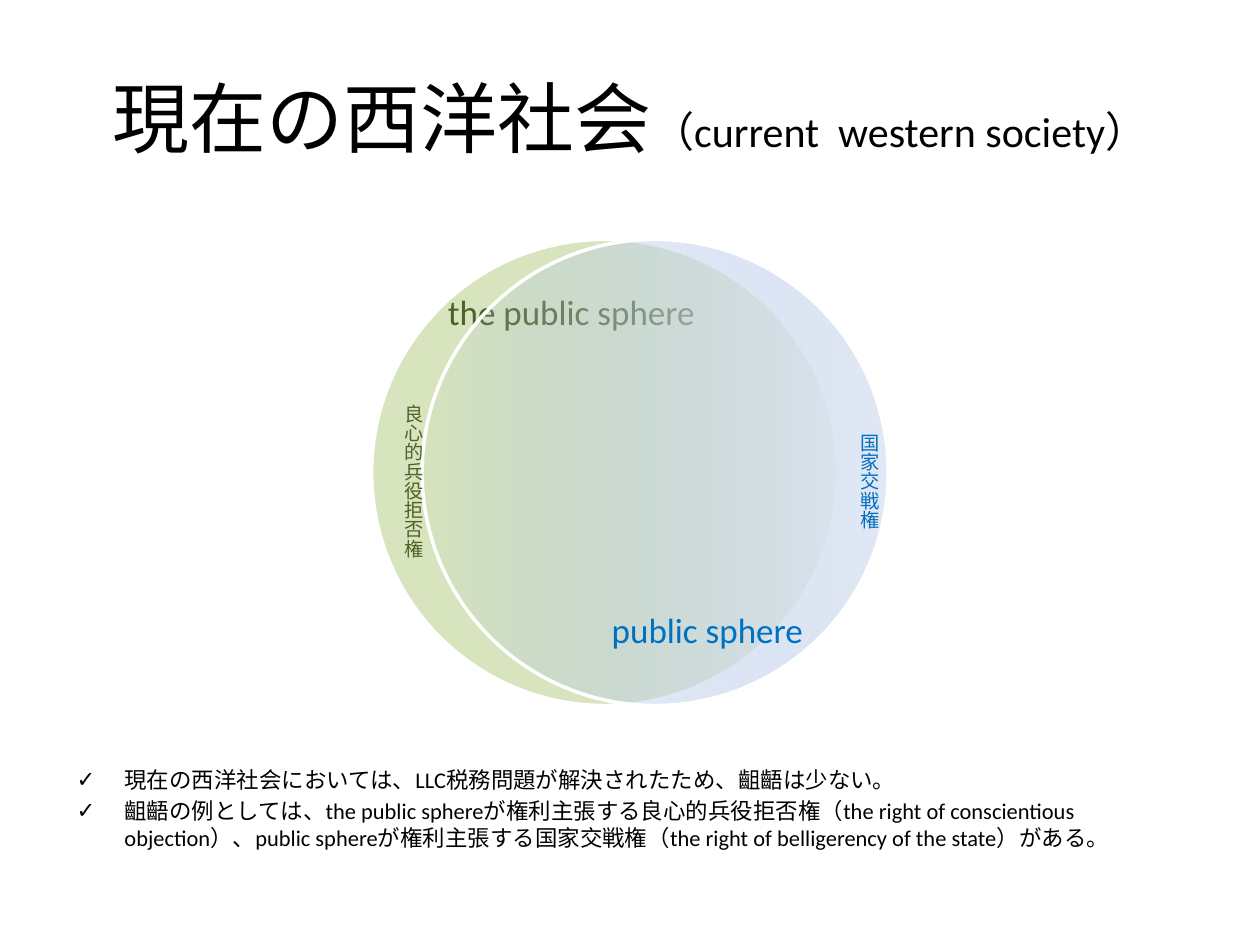
from lxml import etree
from pptx import Presentation
from pptx.dml.color import RGBColor
from pptx.enum.shapes import MSO_SHAPE
from pptx.enum.text import MSO_ANCHOR, PP_ALIGN
from pptx.oxml import parse_xml
from pptx.oxml.ns import nsdecls, qn
from pptx.util import Inches, Pt

ELLIPSE = MSO_SHAPE.OVAL
TOP, MIDDLE, BOTTOM = MSO_ANCHOR.TOP, MSO_ANCHOR.MIDDLE, MSO_ANCHOR.BOTTOM
CENTER = PP_ALIGN.CENTER

BLACK = RGBColor(0x00, 0x00, 0x00)
WHITE = RGBColor(0xFF, 0xFF, 0xFF)
PALE_GREEN = RGBColor(0xD7, 0xE4, 0xBD)
DARK_GREEN = RGBColor(0x4F, 0x62, 0x28)
BLUE = RGBColor(0x00, 0x70, 0xC0)
FADE_STOPS = [
    (0, RGBColor(0x9A, 0xB5, 0xE4), 0),
    (50, RGBColor(0xC2, 0xD1, 0xED), 50),
    (100, RGBColor(0xE1, 0xE8, 0xF5), 100),
]

TITLE_PARTS = [("現在の西洋社会", 44), ("（current  western society）", 24)]
NOTES = [
    "現在の西洋社会においては、LLC税務問題が解決されたため、齟齬は少ない。",
    "齟齬の例としては、the public sphereが権利主張する良心的兵役拒否権"
    "（the right of conscientious objection）、public sphereが権利主張する"
    "国家交戦権（the right of belligerency of the state）がある。",
]


def set_format(target, **values):
    for name, value in values.items():
        setattr(target, name, value)


def add_run(p, text, size, color):
    r = p.add_run()
    r.text = text
    set_format(r.font, name="Calibri", size=Pt(size))
    r.font.color.rgb = color


def add_circle(s, left, top, size):
    sp = s.shapes.add_shape(ELLIPSE, *map(Inches, (left, top, size, size)))
    sp.shadow.inherit = False
    sp.fill.solid()
    sp.fill.fore_color.rgb = PALE_GREEN
    sp.line.color.rgb = WHITE
    sp.line.width = Pt(2)
    return sp


def fade_fill(sp):
    stops = "".join(
        f'<a:gs pos="{pos * 1000}"><a:srgbClr val="{color}">'
        f'<a:alpha val="{alpha * 1000}"/></a:srgbClr></a:gs>'
        for pos, color, alpha in FADE_STOPS
    )
    solid = sp._element.spPr.find(qn("a:solidFill"))
    solid.getparent().replace(solid, parse_xml(
        f'<a:gradFill {nsdecls("a")} rotWithShape="1"><a:gsLst>{stops}</a:gsLst>'
        '<a:lin ang="0" scaled="0"/></a:gradFill>'))


def add_sphere_label(s, box, text, color, anchor):
    tf = s.shapes.add_textbox(*map(Inches, box)).text_frame
    set_format(tf, word_wrap=True, vertical_anchor=anchor, margin_left=0,
               margin_right=0, margin_top=0, margin_bottom=0)
    p = tf.paragraphs[0]
    set_format(p, alignment=CENTER, line_spacing=0.9)
    add_run(p, text, 20, color)


def add_vertical_label(s, box, text, color):
    tf = s.shapes.add_textbox(*map(Inches, box)).text_frame
    tf.word_wrap = False
    tf._txBody.bodyPr.set("vert", "eaVert")
    add_run(tf.paragraphs[0], text, 11, color)


def add_title(s, box):
    sp = s.shapes.title
    left, top, width, height = map(Inches, box)
    set_format(sp, left=left, top=top, width=width, height=height)
    sp.text_frame.vertical_anchor = MIDDLE
    p = sp.text_frame.paragraphs[0]
    p.alignment = CENTER
    for text, size in TITLE_PARTS:
        add_run(p, text, size, BLACK)


def add_spheres(s, left, top, size, shift):
    label_top, label_w, label_h = top + 0.44, 2.13, 2.83
    add_circle(s, left, top, size)
    add_sphere_label(s, (left + 0.52, label_top, label_w, label_h),
                     "the public sphere", DARK_GREEN, TOP)
    fade_fill(add_circle(s, left + shift, top, size))
    add_sphere_label(s, (left + 1.6, label_top, label_w, label_h),
                     "public sphere", BLUE, BOTTOM)
    add_vertical_label(s, (left + 0.08, top + 1.21, 0.39, 1.34),
                       "良心的兵役拒否権", DARK_GREEN)
    add_vertical_label(s, (left + size, top + 1.44, 0.39, 0.87), "国家交戦権", BLUE)


def add_notes(s, box):
    tf = s.shapes.add_textbox(*map(Inches, box)).text_frame
    tf.word_wrap = True
    for i, text in enumerate(NOTES):
        p = tf.add_paragraph() if i else tf.paragraphs[0]
        pPr = p._p.get_or_add_pPr()
        pPr.set("marL", str(Inches(0.38)))
        pPr.set("indent", str(Inches(-0.38)))
        etree.SubElement(pPr, qn("a:buFont")).set("typeface", "Calibri")
        etree.SubElement(pPr, qn("a:buChar")).set("char", "✓")
        if i:
            p.space_before = Pt(2.6)
        add_run(p, text, 12.8, BLACK)


def main():
    prs = Presentation()
    prs.slide_width, prs.slide_height = Inches(10), Inches(7.5)
    s = prs.slides.add_slide(prs.slide_layouts[5])
    add_title(s, (0.5, 0.3, 9, 1.25))
    add_spheres(s, 2.95, 1.9, 3.7, 0.4)
    add_notes(s, (0.51, 6.03, 9, 0.71))
    prs.save("out.pptx")


if __name__ == "__main__":
    main()
